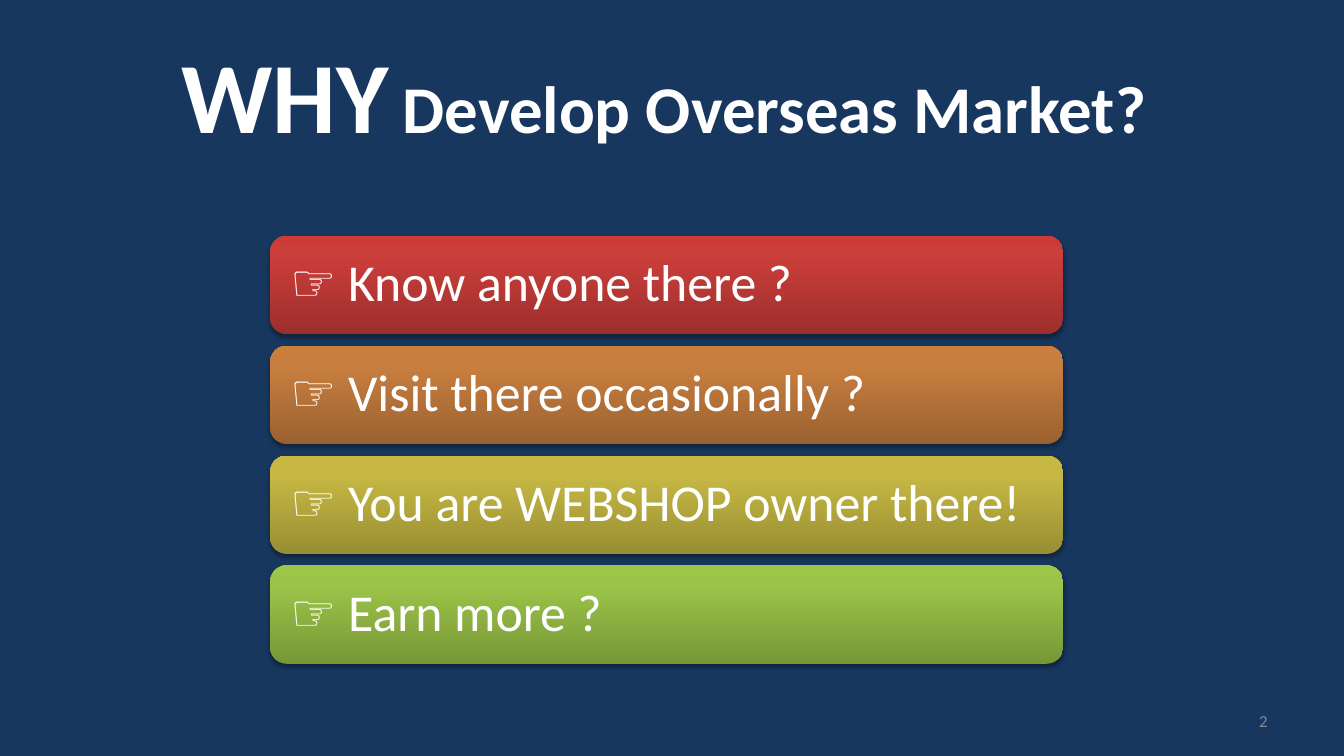
from lxml import etree
from pptx import Presentation
from pptx.dml.color import RGBColor
from pptx.enum.shapes import MSO_SHAPE
from pptx.enum.text import MSO_ANCHOR, PP_ALIGN
from pptx.oxml.ns import qn
from pptx.util import Inches, Pt

WIDTH, HEIGHT = 13.33, 7.5
ROUNDED = MSO_SHAPE.ROUNDED_RECTANGLE
MIDDLE = MSO_ANCHOR.MIDDLE
LEFT, CENTER, RIGHT = PP_ALIGN.LEFT, PP_ALIGN.CENTER, PP_ALIGN.RIGHT

# Bar wording with gradient colours from bottom to top
BARS = [
    ("Know anyone there ?", ("9C2F2D", "CB3E3A", "CE3B37")),
    ("Visit there occasionally ?", ("9A6130", "C87E3F", "CC7E3C")),
    ("You are WEBSHOP owner there!", ("988E34", "C6B843", "C9BB41")),
    ("Earn more ?", ("779737", "9BC348", "9DC746")),
]
GRADIENT_STOPS = (0, 80, 100)


def color(hex_string):
    return RGBColor.from_string(hex_string)


def add_xml(parent, tag, **attributes):
    element = etree.SubElement(parent, qn(tag))
    for name, value in attributes.items():
        element.set(name, str(value))
    return element


class SlideBuilder:
    font = "Calibri"
    white, gray, navy = "FFFFFF", "898989", "17375E"

    def __init__(self, presentation):
        self.slide = presentation.slides.add_slide(presentation.slide_layouts[6])
        background = self.slide.background.fill
        background.solid()
        background.fore_color.rgb = color(self.navy)

    def place(self, left, top, width, height):
        """Turn shares of the slide's size into lengths."""
        return (Inches(left * WIDTH), Inches(top * HEIGHT),
                Inches(width * WIDTH), Inches(height * HEIGHT))

    def fill_text(self, shape, runs, align, text_color):
        frame = shape.text_frame
        frame.word_wrap = True
        frame.vertical_anchor = MIDDLE
        paragraph = frame.paragraphs[0]
        paragraph.alignment = align
        for text, size, bold in runs:
            run = paragraph.add_run()
            run.text = text
            run.font.name = self.font
            run.font.size = Pt(size)
            run.font.bold = bold
            run.font.color.rgb = color(text_color)
        return paragraph

    def text(self, area, runs, align, text_color):
        box = self.slide.shapes.add_textbox(*self.place(*area))
        self.fill_text(box, runs, align, text_color)

    def bar(self, area, label, colors):
        shape = self.slide.shapes.add_shape(ROUNDED, *self.place(*area))
        shape.line.fill.background()
        self.gradient(shape, colors)
        self.soft_shadow(shape)
        frame = shape.text_frame
        frame.margin_left = frame.margin_right = Inches(0.15)
        frame.margin_top = frame.margin_bottom = Inches(0.15)
        runs = [("☞ " + label, 37, False)]
        paragraph = self.fill_text(shape, runs, LEFT, self.white)
        paragraph.line_spacing = 0.9

    def gradient(self, shape, colors):
        shape.fill.gradient()
        shape.fill.gradient_angle = 90
        stops = shape._element.spPr.find(".//" + qn("a:gsLst"))
        for stop in list(stops):
            stops.remove(stop)
        for position, hex_string in zip(GRADIENT_STOPS, colors):
            stop = add_xml(stops, "a:gs", pos=position * 1000)
            add_xml(stop, "a:srgbClr", val=hex_string)

    def soft_shadow(self, shape):
        shape.shadow.inherit = False
        effects = shape._element.spPr.find(qn("a:effectLst"))
        shadow = add_xml(effects, "a:outerShdw", blurRad=int(Pt(3.1)),
                         dist=int(Pt(1.8)), dir=90 * 60000, rotWithShape=0)
        add_xml(add_xml(shadow, "a:srgbClr", val="000000"), "a:alpha", val=35000)


def main():
    presentation = Presentation()
    presentation.slide_width = Inches(WIDTH)
    presentation.slide_height = Inches(HEIGHT)
    builder = SlideBuilder(presentation)

    # Title
    builder.text((0.05, 0.04, 0.9, 1 / 6),
                 [("WHY", 72, True), (" ", 43.2, False),
                  ("Develop Overseas Market? ", 47.7, True)],
                 CENTER, builder.white)

    # Stack of question bars
    first_top, pitch, bar_height = 2.34 / HEIGHT, 1.09 / HEIGHT, 0.13
    for row, (label, colors) in enumerate(BARS):
        area = (2.68 / WIDTH, first_top + row * pitch, 0.59, bar_height)
        builder.bar(area, label, colors)

    # Slide number
    builder.text((9.56 / WIDTH, 6.95 / HEIGHT, 3.11 / WIDTH, 0.4 / HEIGHT),
                 [("2", 12, False)], RIGHT, builder.gray)

    presentation.save("out.pptx")


if __name__ == "__main__":
    main()
